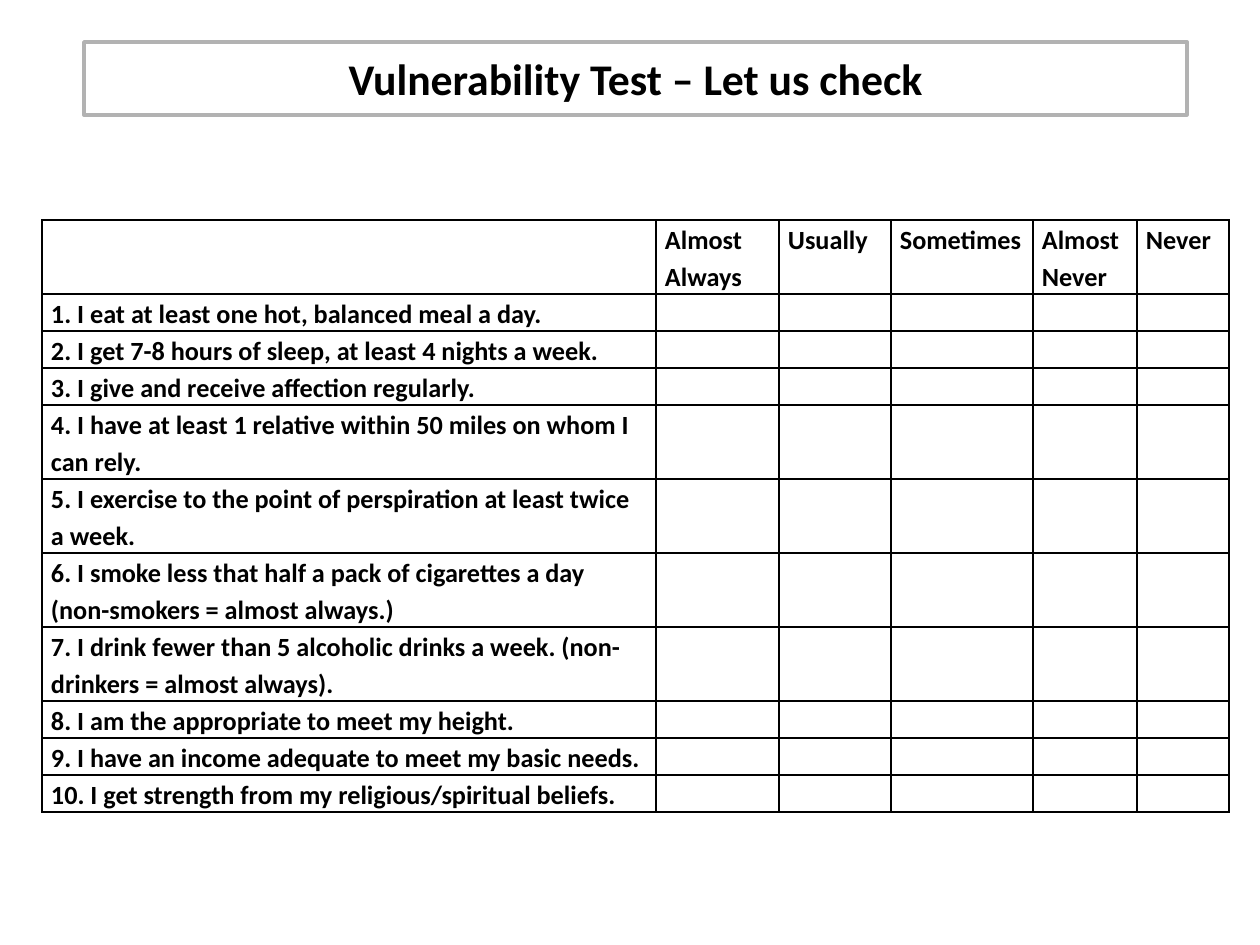
"""Build the vulnerability test slide: a framed title above a self-rating table."""
from lxml import etree
from pptx import Presentation
from pptx.dml.color import RGBColor
from pptx.enum.shapes import MSO_SHAPE
from pptx.enum.text import MSO_ANCHOR, PP_ALIGN
from pptx.oxml.ns import qn
from pptx.util import Pt

RECTANGLE = MSO_SHAPE.RECTANGLE
MIDDLE = MSO_ANCHOR.MIDDLE
CENTER = PP_ALIGN.CENTER
PX = 914400 / 126
THEME = {
    "font": "Calibri",
    "ink": "000000",
    "paper": "FFFFFF",
    "frame": "B2B2B2",
    "title_size": 25,
    "table_size": 15,
    "frame_width": 2,
    "grid_width": 1,
}


def px(*lengths):
    return [round(length * PX) for length in lengths]


def style_font(font, size):
    font.color.rgb = RGBColor.from_string(THEME["ink"])
    for attribute, setting in {"name": THEME["font"], "size": Pt(size), "bold": True}.items():
        setattr(font, attribute, setting)


ratings = ["Almost Always", "Usually", "Sometimes", "Almost Never", "Never"]
statements = [
    "I eat at least one hot, balanced meal a day.",
    "I get 7-8 hours of sleep, at least 4 nights a week.",
    "I give and receive affection regularly.",
    "I have at least 1 relative within 50 miles on whom I can rely.",
    "I exercise to the point of perspiration at least twice a week.",
    "I smoke less that half a pack of cigarettes a day (non-smokers = almost always.)",
    "I drink fewer than 5 alcoholic drinks a week. (non-drinkers = almost always).",
    "I am the appropriate to meet my height.",
    "I have an income adequate to meet my basic needs.",
    "I get strength from my religious/spiritual beliefs.",
]
line_counts = [2, 1, 1, 1, 2, 2, 2, 2, 1, 1, 1]
line_height = 37
column_widths = [614, 123, 112, 142, 104, 92]

deck = Presentation()
deck.slide_width, deck.slide_height = px(1260, 945)
slide = deck.slides.add_slide(deck.slide_layouts[6])

title = slide.shapes.add_shape(RECTANGLE, *px(84, 42, 1103, 73))
title.shadow.inherit = False
title.fill.solid()
title.fill.fore_color.rgb = RGBColor.from_string(THEME["paper"])
title.line.color.rgb = RGBColor.from_string(THEME["frame"])
title.line.width = Pt(THEME["frame_width"])
title.text_frame.vertical_anchor = MIDDLE
heading = title.text_frame.paragraphs[0]
heading.alignment = CENTER
heading_run = heading.add_run()
heading_run.text = "Vulnerability Test – Let us check"
style_font(heading_run.font, THEME["title_size"])

grid_size = px(sum(column_widths), sum(line_counts) * line_height)
checklist = slide.shapes.add_table(
    len(line_counts), len(column_widths), *px(42, 220), *grid_size
).table
checklist.first_row = False
checklist.horz_banding = False
for column, width in zip(checklist.columns, column_widths):
    column.width = px(width)[0]
for row, line_count in zip(checklist.rows, line_counts):
    row.height = px(line_count * line_height)[0]

side_margin = px(9)[0]
cell_format = {"margin_left": side_margin, "margin_right": side_margin, "margin_top": 0, "margin_bottom": 0}
wording = [["", *ratings]]
for number, statement in enumerate(statements, 1):
    wording.append([f"{number}. {statement}"] + [""] * len(ratings))

for row, row_wording in zip(checklist.rows, wording):
    for cell, text in zip(row.cells, row_wording):
        for attribute, setting in cell_format.items():
            setattr(cell, attribute, setting)
        properties = cell._tc.get_or_add_tcPr()
        for side in ("a:lnL", "a:lnR", "a:lnT", "a:lnB"):
            border = etree.SubElement(properties, qn(side), w=str(Pt(THEME["grid_width"])))
            ink = etree.SubElement(border, qn("a:solidFill"))
            etree.SubElement(ink, qn("a:srgbClr"), val=THEME["ink"])
        cell.fill.background()
        paragraph = cell.text_frame.paragraphs[0]
        paragraph.line_spacing = 1.15
        if text:
            run = paragraph.add_run()
            run.text = text
            style_font(run.font, THEME["table_size"])
        else:
            etree.SubElement(paragraph._p, qn("a:endParaRPr"), sz=str(THEME["table_size"] * 100))

deck.save("out.pptx")
